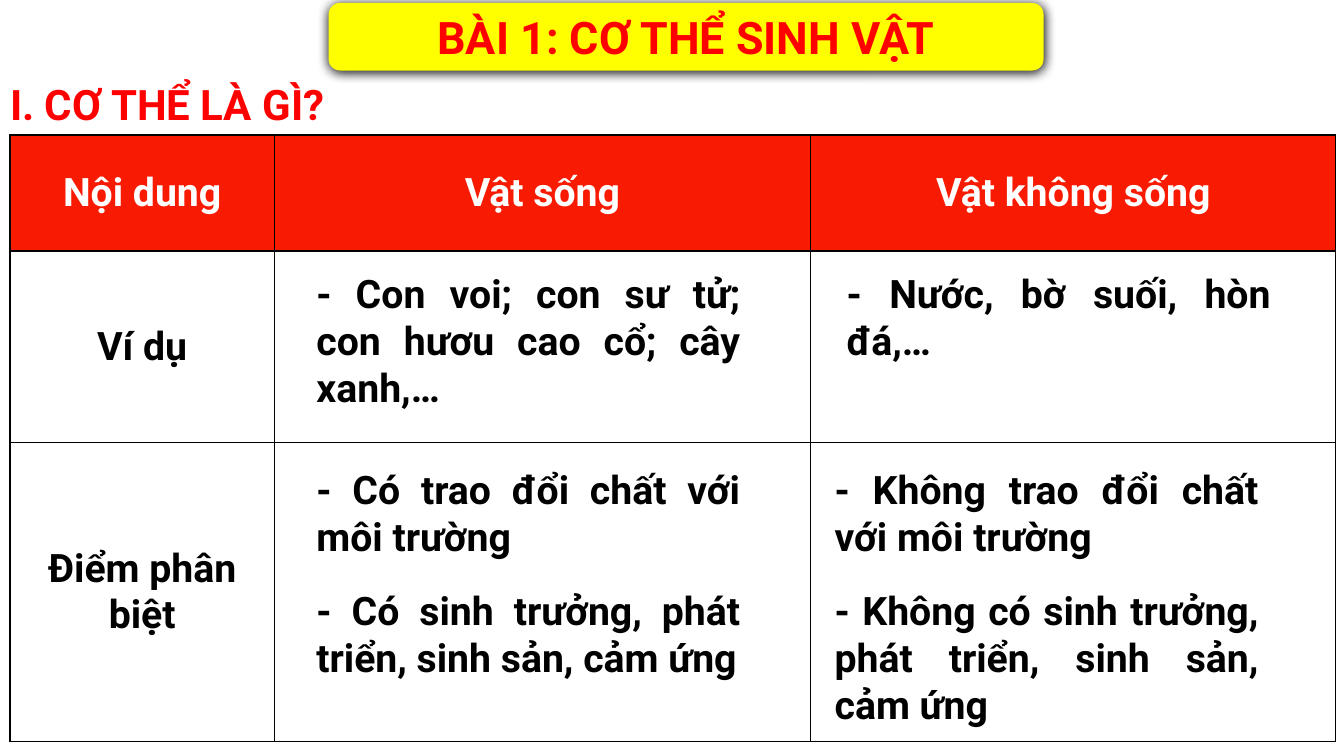
from lxml import etree
from pptx import Presentation
from pptx.dml.color import RGBColor
from pptx.enum import shapes, text
from pptx.oxml import parse_xml
from pptx.oxml.ns import nsdecls
from pptx.util import Inches, Pt

RED, BLACK, WHITE = "FF0000", "000000", "FFFFFF"
HEADER_RED, YELLOW = "F81B02", "FFFF00"
ALIGN, ANCHOR = text.PP_ALIGN, text.MSO_ANCHOR
COLS = [2.62, 5.32, 5.21]
ROWS = [1.15, 1.9, 2.97]
CELLS = [
    ["Nội dung", "Vật sống", "Vật không sống"],
    ["Ví dụ", "", ""],
    ["Điểm phân biệt", "", ""],
]
NOTES = [
    (3.04, 2.62, 1.51, "- Con voi; con sư tử; con hươu cao cổ; cây xanh,…"),
    (8.3, 2.62, 1.04, "- Nước, bờ suối, hòn đá,…"),
    (3.04, 4.57, 1.04, "- Có trao đổi chất với môi trường"),
    (8.18, 4.57, 1.04, "- Không trao đổi chất với môi trường"),
    (3.04, 5.77, 1.51, "- Có sinh trưởng, phát triển, sinh sản, cảm ứng"),
    (8.18, 5.77, 1.51, "- Không có sinh trưởng, phát triển, sinh sản, cảm ứng"),
]


def rgb(value):
    return RGBColor.from_string(value)


def write(tf, words, size, color, align, anchor=ANCHOR.TOP):
    tf.text = words
    tf.word_wrap = True
    tf.vertical_anchor = anchor
    p = tf.paragraphs[0]
    p.alignment = align
    for r in p.runs:
        r.font.name = "Roboto"
        r.font.size = Pt(size)
        r.font.bold = True
        r.font.color.rgb = rgb(color)


def add_banner(s, words):
    sp = s.shapes.add_shape(shapes.MSO_SHAPE.ROUNDED_RECTANGLE,
                            Inches(3.26), Inches(0.03), Inches(7.09), Inches(0.67))
    sp.fill.solid()
    sp.fill.fore_color.rgb = rgb(YELLOW)
    sp.line.fill.background()
    sp.shadow.inherit = False
    effects = sp.element.spPr.find("{*}effectLst")
    effects.append(parse_xml(
        f'<a:outerShdw {nsdecls("a")} blurRad="{Pt(8.5)}" dist="{Pt(1)}" dir="5400000" '
        f'algn="t" rotWithShape="0"><a:srgbClr val="{BLACK}"/></a:outerShdw>'))
    write(sp.text_frame, words, 32, RED, ALIGN.CENTER, ANCHOR.MIDDLE)


def place_title(s, words):
    sp = s.shapes.title
    sp.left, sp.top, sp.width, sp.height = map(Inches, (0, 0.73, 3.87, 0.61))
    write(sp.text_frame, words, 30, RED, ALIGN.LEFT)
    sp.text_frame.auto_size = text.MSO_AUTO_SIZE.SHAPE_TO_FIT_TEXT


def add_borders(cell):
    tcPr = cell._tc.get_or_add_tcPr()
    for i, side in enumerate(("lnL", "lnR", "lnT", "lnB")):
        tcPr.insert(i, etree.fromstring(
            f'<a:{side} {nsdecls("a")} w="{Pt(1)}"><a:solidFill>'
            f'<a:srgbClr val="{BLACK}"/></a:solidFill></a:{side}>'))


def add_comparison(s):
    table = s.shapes.add_table(len(ROWS), len(COLS), Inches(0.1), Inches(1.34),
                               Inches(sum(COLS)), Inches(sum(ROWS))).table
    for column, width in zip(table.columns, COLS):
        column.width = Inches(width)
    for i, (row, height) in enumerate(zip(table.rows, ROWS)):
        row.height = Inches(height)
        fill, color = (WHITE, BLACK) if i else (HEADER_RED, WHITE)
        for cell, words in zip(row.cells, CELLS[i]):
            cell.fill.solid()
            cell.fill.fore_color.rgb = rgb(fill)
            add_borders(cell)
            if words:
                write(cell.text_frame, words, 28, color, ALIGN.CENTER)
                cell.vertical_anchor = ANCHOR.MIDDLE


def add_note(s, left, top, height, words):
    sp = s.shapes.add_textbox(Inches(left), Inches(top), Inches(4.4), Inches(height))
    write(sp.text_frame, words, 28, BLACK, ALIGN.JUSTIFY)
    sp.text_frame.auto_size = text.MSO_AUTO_SIZE.SHAPE_TO_FIT_TEXT


def main():
    """Build the lesson slide comparing living and non-living things."""
    prs = Presentation()
    prs.slide_width, prs.slide_height = Inches(13.33), Inches(7.5)
    s = prs.slides.add_slide(prs.slide_layouts[5])
    add_banner(s, "BÀI 1: CƠ THỂ SINH VẬT")
    place_title(s, "I. CƠ THỂ LÀ GÌ?")
    add_comparison(s)
    for note in NOTES:
        add_note(s, *note)
    prs.save("out.pptx")


if __name__ == "__main__":
    main()
